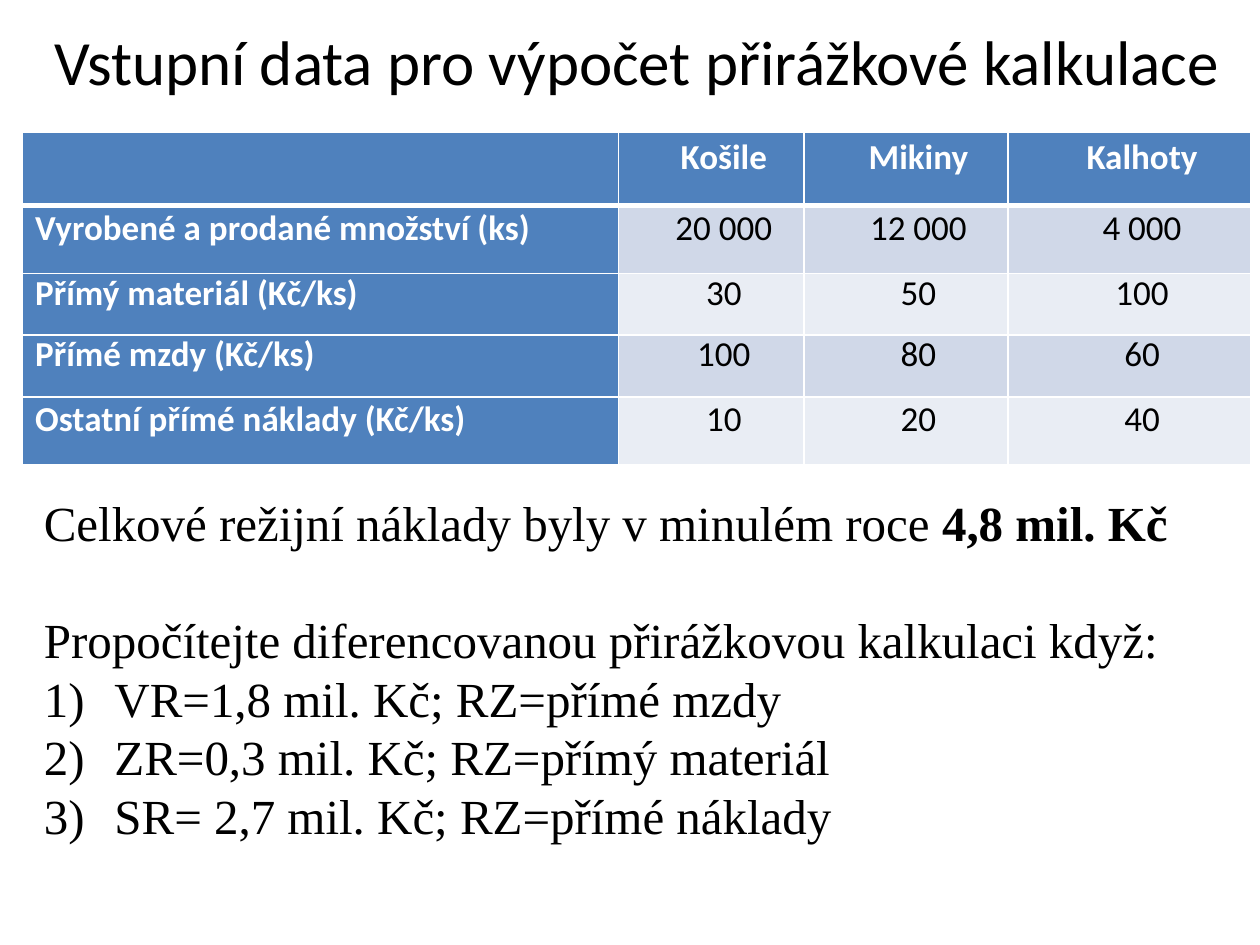
from dataclasses import dataclass

from lxml.etree import SubElement
from pptx import Presentation
from pptx.dml.color import RGBColor
from pptx.enum.shapes import MSO_SHAPE
from pptx.enum.text import MSO_ANCHOR, PP_ALIGN
from pptx.oxml.ns import qn
from pptx.util import Inches, Pt


@dataclass(frozen=True)
class Theme:
    white: str = "FFFFFF"
    black: str = "000000"
    blue: str = "4F81BD"
    bands: tuple = ("D0D8E8", "E9EDF4")
    sans: str = "Calibri"
    serif: str = "Times New Roman"
    title_size: int = 36
    table_size: int = 20
    body_size: int = 28
    body_line: float = 33.5


def apply(target, values):
    for name, value in values.items():
        setattr(target, name, value)


class SlideBuilder:
    def __init__(self, slide, theme):
        self.slide = slide
        self.theme = theme

    def add_span(self, para, text, font, size, color, bold=False):
        span = para.add_run()
        span.text = text
        apply(span.font, {"name": font, "size": Pt(size), "bold": bold})
        span.font.color.rgb = RGBColor.from_string(color)

    def fill(self, target, color):
        target.fill.solid()
        target.fill.fore_color.rgb = RGBColor.from_string(color)

    def indent(self, para, left, first=0):
        properties = para._p.get_or_add_pPr()
        properties.set("marL", str(Inches(left)))
        properties.set("indent", str(Inches(first)))
        return properties

    def title(self, text, left, top, width, height):
        theme = self.theme
        box = self.slide.shapes.add_shape(
            MSO_SHAPE.RECTANGLE, *map(Inches, (left, top, width, height)))
        box.shadow.inherit = False
        self.fill(box, theme.white)
        box.line.fill.background()
        apply(box.text_frame, {"word_wrap": True, "vertical_anchor": MSO_ANCHOR.TOP})
        para = box.text_frame.paragraphs[0]
        para.alignment = PP_ALIGN.CENTER
        self.add_span(para, text, theme.sans, theme.title_size, theme.black)

    def borders(self, cell, top, bottom):
        """Add white cell borders ahead of the fill, as the schema orders them."""
        properties = cell._tc.get_or_add_tcPr()
        widths = {"a:lnL": 1, "a:lnR": 1, "a:lnT": top, "a:lnB": bottom}
        for tag, width in widths.items():
            line = SubElement(properties, qn(tag), w=str(Pt(width)))
            solid = SubElement(line, qn("a:solidFill"))
            SubElement(solid, qn("a:srgbClr"), val=self.theme.white)

    def table(self, rows, left, top, widths, heights):
        theme = self.theme
        frame = self.slide.shapes.add_table(
            len(rows), len(widths),
            *map(Inches, (left, top, sum(widths), sum(heights))))
        table = frame.table
        for column, width in zip(table.columns, widths):
            column.width = Inches(width)
        for row, height in zip(table.rows, heights):
            row.height = Inches(height)
        for i, row in enumerate(rows):
            for j, text in enumerate(row):
                cell = table.cell(i, j)
                heading = i == 0 or j == 0
                self.borders(cell, 3 if i == 1 else 1, 3 if i == 0 else 1)
                self.fill(cell, theme.blue if heading else theme.bands[(i - 1) % 2])
                if not text:
                    continue
                apply(cell, {
                    "vertical_anchor": MSO_ANCHOR.MIDDLE,
                    "margin_left": Inches(0.07), "margin_right": Inches(0.07),
                    "margin_top": 0, "margin_bottom": 0,
                })
                para = cell.text_frame.paragraphs[0]
                self.indent(para, 0.2 if j else 0.03)
                apply(para, {
                    "alignment": PP_ALIGN.CENTER if j else PP_ALIGN.LEFT,
                    "line_spacing": Pt(12),
                })
                self.add_span(para, text, theme.sans, theme.table_size,
                              theme.white if heading else theme.black, heading)

    def assignment(self, fact, amount, task, steps, left, top, width, height):
        theme = self.theme
        box = self.slide.shapes.add_textbox(
            *map(Inches, (left, top, width, height)))
        frame = box.text_frame
        frame.word_wrap = True
        style = (theme.serif, theme.body_size, theme.black)

        para = frame.paragraphs[0]
        self.add_span(para, fact, *style)
        self.add_span(para, amount, *style, bold=True)

        para = frame.add_paragraph()
        para.space_before = Pt(theme.body_line)
        self.add_span(para, task, *style)

        for step in steps:
            para = frame.add_paragraph()
            properties = self.indent(para, 0.56, -0.56)
            SubElement(properties, qn("a:buFont"), typeface=theme.serif)
            SubElement(properties, qn("a:buAutoNum"), type="arabicParenR")
            self.add_span(para, step, *style)

        for para in frame.paragraphs:
            para.line_spacing = Pt(theme.body_line)


def main():
    deck = Presentation()
    apply(deck, {"slide_width": Inches(10), "slide_height": Inches(7.5)})
    page = SlideBuilder(deck.slides.add_slide(deck.slide_layouts[6]), Theme())

    page.title("Vstupní data pro výpočet přirážkové kalkulace", 0.11, 0.13, 9.89, 1.25)
    page.table(
        [
            ("", "Košile", "Mikiny", "Kalhoty"),
            ("Vyrobené a prodané množství (ks)", "20 000", "12 000", "4 000"),
            ("Přímý materiál (Kč/ks)", "30", "50", "100"),
            ("Přímé mzdy (Kč/ks)", "100", "80", "60"),
            ("Ostatní přímé náklady (Kč/ks)", "10", "20", "40"),
        ],
        0.18, 1.05,
        widths=(4.73, 1.47, 1.62, 1.93),
        heights=(0.58, 0.54, 0.49, 0.49, 0.54),
    )
    page.assignment(
        "Celkové režijní náklady byly v minulém roce ", "4,8 mil. Kč",
        "Propočítejte diferencovanou přirážkovou kalkulaci když:",
        (
            "VR=1,8 mil. Kč; RZ=přímé mzdy",
            "ZR=0,3 mil. Kč; RZ=přímý materiál",
            "SR= 2,7 mil. Kč; RZ=přímé náklady",
        ),
        0.25, 3.86, 9.29, 3.4,
    )
    deck.save("out.pptx")


if __name__ == "__main__":
    main()
